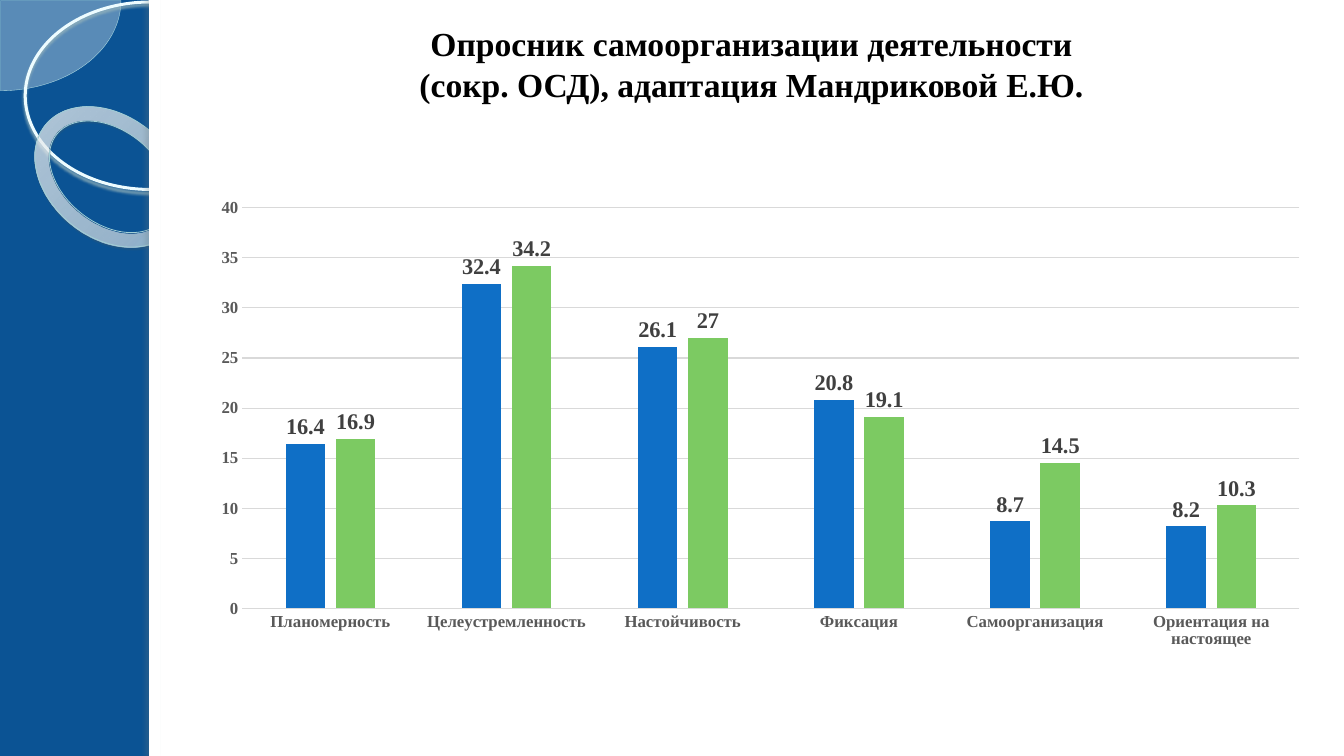
from lxml import etree
from pptx import Presentation
from pptx.chart.data import CategoryChartData
from pptx.dml.color import RGBColor
from pptx.enum.chart import XL_CHART_TYPE as CT, XL_LABEL_POSITION as LP, XL_TICK_MARK as TM
from pptx.enum.shapes import MSO_SHAPE as MS
from pptx.enum.text import MSO_ANCHOR, PP_ALIGN
from pptx.oxml import parse_xml
from pptx.oxml.ns import nsdecls, qn
from pptx.util import Inches, Pt

FONT = "Times New Roman"
C = {
    "bg": "0B5394", "white": "FFFFFF", "black": "000000",
    "pie": "F8FEFF", "pie_line": "AFDBE2", "circle_line": "EDFCFF",
    "circle_shadow": "9CB9BE", "ring_line": "A1CFD6", "ring_shadow": "4B5E61",
    "edge_shadow": "6C7A7C", "axis": "595959", "grid": "D9D9D9",
    "label": "404040", "blue": "0F6FC6", "green": "7CCA62",
}
TITLE = ["Опросник самоорганизации деятельности ",
         "(сокр. ОСД), адаптация Мандриковой Е.Ю. "]
CATEGORIES = ["Планомерность", "Целеустремленность", "Настойчивость",
              "Фиксация", "Самоорганизация", "Ориентация на настоящее"]
SERIES = [
    ("Series 1", "blue", [16.4, 32.4, 26.1, 20.8, 8.7, 8.2]),
    ("Series 2", "green", [16.9, 34.2, 27, 19.1, 14.5, 10.3]),
]
PLOT = {"x": 0.062, "y": 0.098, "w": 0.937, "h": 0.627}
RING_STOPS = [(0, "F9FEFF", 70), (70, "FDFFFF", 55), (100, "9EF2FF", 60)]
RING_FOCUS = {"l": -408, "t": -50, "r": 508, "b": 150}
DECOR = [
    {"kind": MS.PIE, "at": (-1.19, -0.89, 2.39, 1.79), "adj": (0, 54.02),
     "fill": "pie", "alpha": 33, "line": ("pie_line", 0.25)},
    {"kind": MS.OVAL, "at": (0.25, 0.02, 2.48, 1.86),
     "line": ("circle_line", 2.15), "shadow": ("circle_shadow", 85, 2, 2, 90)},
    {"kind": MS.DONUT, "at": (0.27, 1.15, 1.64, 1.21), "adj": (0.12,), "rot": 38.6,
     "grad": RING_STOPS, "line": ("ring_line", 0.58),
     "shadow": ("ring_shadow", 35, 1, 1.2, 75)},
    {"kind": MS.RECTANGLE, "at": (1.48, 0, 11.86, 7.5), "fill": "white"},
    {"kind": MS.RECTANGLE, "at": (1.48, 0, 0.11, 7.5), "fill": "white",
     "shadow": ("edge_shadow", 25, 3, 3, 180)},
]


def rgb(name):
    return RGBColor.from_string(C[name])


def set_font(font, size, color):
    for key, value in {"name": FONT, "size": Pt(size), "bold": True}.items():
        setattr(font, key, value)
    font.color.rgb = rgb(color)


def add_color(parent, value, alpha):
    color = etree.SubElement(parent, qn("a:srgbClr"), val=value)
    etree.SubElement(color, qn("a:alpha"), val=str(alpha * 1000))


def add_shadow(sp, color, alpha, blur, dist, angle):
    effects = sp._element.spPr.find(qn("a:effectLst"))
    shadow = etree.SubElement(
        effects, qn("a:outerShdw"), blurRad=str(Pt(blur)), dist=str(Pt(dist)),
        dir=str(angle * 60000), algn="tl", rotWithShape="0")
    add_color(shadow, C[color], alpha)


def add_gradient(sp, stops):
    grad = parse_xml(f'<a:gradFill {nsdecls("a")} rotWithShape="1"><a:gsLst/></a:gradFill>')
    for pos, color, alpha in stops:
        stop = etree.SubElement(grad[0], qn("a:gs"), pos=str(pos * 1000))
        add_color(stop, color, alpha)
    path = etree.SubElement(grad, qn("a:path"))
    path.set("path", "circle")
    focus = {side: str(v * 1000) for side, v in RING_FOCUS.items()}
    etree.SubElement(path, qn("a:fillToRect"), **focus)
    spPr = sp._element.spPr
    spPr.replace(spPr.find(qn("a:noFill")), grad)


def add_decor(s, item):
    sp = s.shapes.add_shape(item["kind"], *map(Inches, item["at"]))
    sp.rotation = item.get("rot", 0)
    for i, value in enumerate(item.get("adj", ())):
        sp.adjustments[i] = value
    if "fill" in item:
        sp.fill.solid()
        sp.fill.fore_color.rgb = rgb(item["fill"])
    else:
        sp.fill.background()
    if "alpha" in item:
        color = sp._element.spPr.find(qn("a:solidFill"))[0]
        etree.SubElement(color, qn("a:alpha"), val=str(item["alpha"] * 1000))
    if "grad" in item:
        add_gradient(sp, item["grad"])
    if "line" in item:
        color, width = item["line"]
        sp.line.color.rgb = rgb(color)
        sp.line.width = Pt(width)
    else:
        sp.line.fill.background()
    sp.shadow.inherit = False
    if "shadow" in item:
        add_shadow(sp, *item["shadow"])


def add_title(s):
    tf = s.shapes.add_textbox(*map(Inches, (2.6, -0.18, 9.79, 1.62))).text_frame
    tf.word_wrap = True
    tf.vertical_anchor = MSO_ANCHOR.MIDDLE
    p = tf.paragraphs[0]
    p.alignment = PP_ALIGN.CENTER
    for i, line in enumerate(TITLE):
        if i:
            p.add_line_break()
        r = p.add_run()
        r.text = line
        set_font(r.font, 24, "black")


def add_survey_chart(s):
    data = CategoryChartData()
    data.categories = CATEGORIES
    for name, _, values in SERIES:
        data.add_series(name, values)
    box = map(Inches, (1.71, 1.44, 11.19, 6.34))
    chart = s.shapes.add_chart(CT.COLUMN_CLUSTERED, *box, data).chart
    chart.has_legend = chart.has_title = False
    set_font(chart.font, 10, "black")

    cat, val = chart.category_axis, chart.value_axis
    for axis in (cat, val):
        axis.major_tick_mark = axis.minor_tick_mark = TM.NONE
        set_font(axis.tick_labels.font, 12, "axis")
    val.minimum_scale, val.maximum_scale, val.major_unit = 0, 40, 5
    val.has_major_gridlines = True
    val.format.line.fill.background()
    for line in (cat.format.line, val.major_gridlines.format.line):
        line.color.rgb = rgb("grid")
        line.width = Pt(0.75)

    plot = chart.plots[0]
    plot.gap_width, plot.overlap, plot.vary_by_categories = 219, -27, False
    for series, (_, color, _) in zip(plot.series, SERIES):
        series.format.fill.solid()
        series.format.fill.fore_color.rgb = rgb(color)
        labels = series.data_labels
        labels.show_value = True
        labels.position = LP.OUTSIDE_END
        set_font(labels.font, 16, "label")

    area = chart._chartSpace.chart.plotArea
    for old in area.findall(qn("c:layout")):
        area.remove(old)
    layout = parse_xml(f'<c:layout {nsdecls("c")}><c:manualLayout/></c:layout>')
    rules = {"layoutTarget": "inner", "xMode": "edge", "yMode": "edge", **PLOT}
    for tag, value in rules.items():
        etree.SubElement(layout[0], qn(f"c:{tag}"), val=str(value))
    area.insert(0, layout)


def main():
    prs = Presentation()
    prs.slide_width, prs.slide_height = Inches(13.33), Inches(7.5)
    s = prs.slides.add_slide(prs.slide_layouts[6])
    s.background.fill.solid()
    s.background.fill.fore_color.rgb = rgb("bg")
    for item in DECOR:
        add_decor(s, item)
    add_title(s)
    add_survey_chart(s)
    prs.save("out.pptx")


if __name__ == "__main__":
    main()
